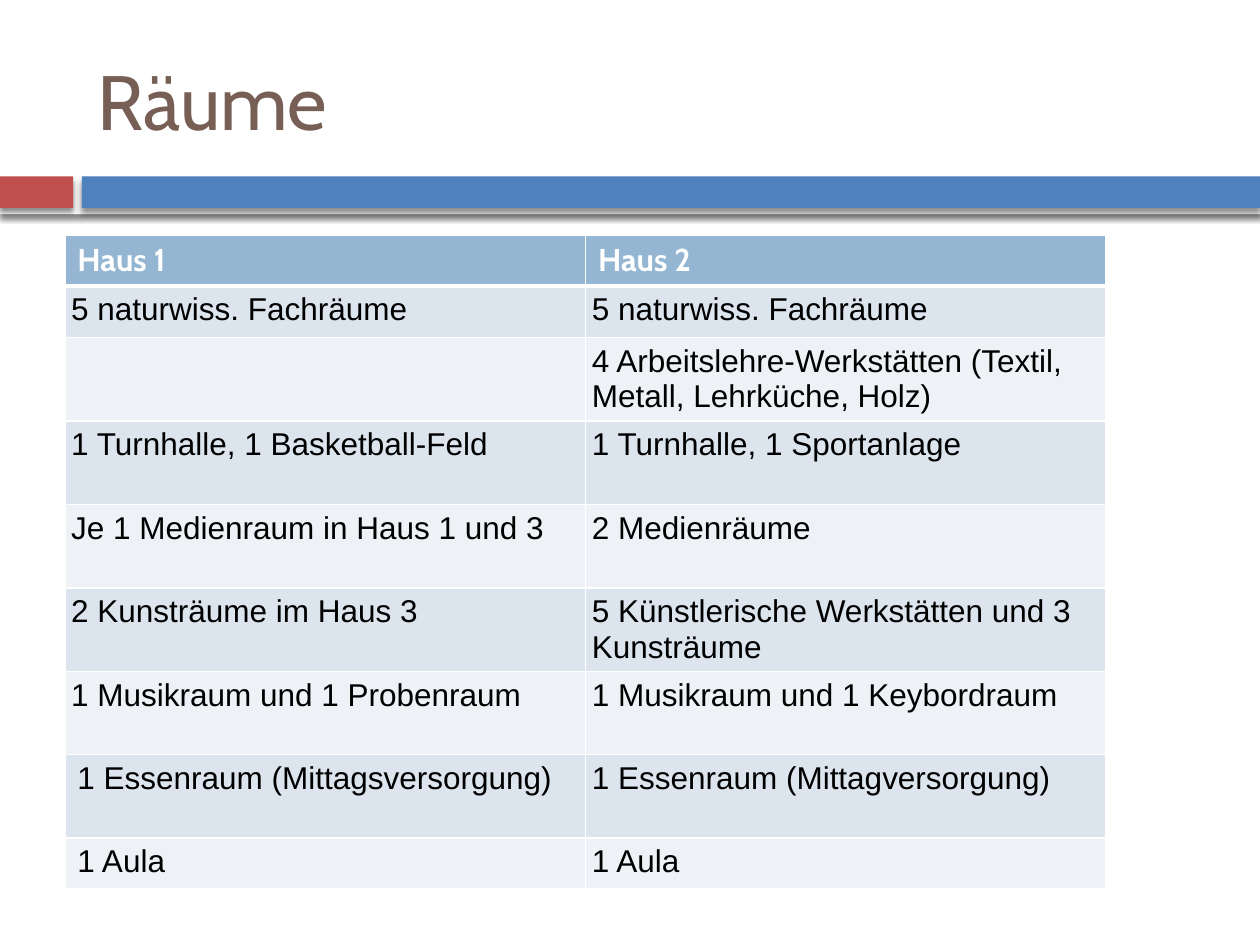
from lxml import etree
from pptx import Presentation, util as u
from pptx.dml.color import RGBColor
from pptx.enum import shapes, text
from pptx.oxml import parse_xml
from pptx.oxml.ns import nsdecls, qn

WHITE = RGBColor(0xFF, 0xFF, 0xFF)
BLACK = RGBColor(0, 0, 0)
RED = RGBColor(0xC0, 0x50, 0x4D)
BLUE = RGBColor(0x4F, 0x81, 0xBD)
BROWN = RGBColor(0x77, 0x5F, 0x55)
HEAD = RGBColor(0x94, 0xB6, 0xD2)
BANDS = (RGBColor(0xDC, 0xE5, 0xEE), RGBColor(0xEE, 0xF2, 0xF6))

ROOMS = [
    ("5 naturwiss. Fachräume", "5 naturwiss. Fachräume"),
    ("", "4 Arbeitslehre-Werkstätten (Textil, Metall, Lehrküche, Holz)"),
    ("1 Turnhalle, 1 Basketball-Feld", "1 Turnhalle, 1 Sportanlage"),
    ("Je 1 Medienraum in Haus 1 und 3", "2 Medienräume"),
    ("2 Kunsträume im Haus 3", "5 Künstlerische Werkstätten und 3 Kunsträume"),
    ("1 Musikraum und 1 Probenraum", "1 Musikraum und 1 Keybordraum"),
    ("1 Essenraum (Mittagsversorgung)", "1 Essenraum (Mittagversorgung)"),
    ("1 Aula", "1 Aula"),
]


def write(frame, words, size=18, font="Arial", color=BLACK, bold=False):
    para = frame.paragraphs[0]
    para.alignment = text.PP_ALIGN.LEFT
    para.font.size = u.Pt(size)
    if words:
        run = para.add_run()
        run.text = words
        run.font.size = u.Pt(size)
        run.font.name = font
        run.font.color.rgb = color
        run.font.bold = bold


class Deck:
    cell = u.Inches(0.1)

    def __init__(self):
        self.prs = Presentation()
        self.prs.slide_width = 100 * self.cell
        self.prs.slide_height = 75 * self.cell
        self.slide = self.prs.slides.add_slide(self.prs.slide_layouts[5])

    def grid(self, *spans):
        return [round(span * self.cell) for span in spans]

    def title(self, words, *box):
        head = self.slide.shapes.title
        head.left, head.top, head.width, head.height = self.grid(*box)
        head.text_frame.vertical_anchor = text.MSO_ANCHOR.MIDDLE
        write(head.text_frame, words, size=44, font="Cabin", color=BROWN)

    def bar(self, color, *box):
        bar = self.slide.shapes.add_shape(
            shapes.MSO_SHAPE.RECTANGLE, *self.grid(*box))
        bar.fill.solid()
        bar.fill.fore_color.rgb = color
        bar.line.fill.background()
        bar.shadow.inherit = False
        glow = bar._element.spPr.find(qn("a:effectLst"))
        glow.append(parse_xml(
            f'<a:outerShdw {nsdecls("a")} blurRad="{u.Pt(3)}" '
            f'dist="{u.Pt(2.4)}" dir="5400000" algn="ctr" rotWithShape="0">'
            '<a:srgbClr val="000000"><a:alpha val="45000"/></a:srgbClr>'
            '</a:outerShdw>'))

    def edges(self, cell, **wide):
        props = cell._tc.get_or_add_tcPr()
        for spot, side in enumerate("LRTB"):
            line = etree.Element(
                qn(f"a:ln{side}"), w=str(u.Pt(wide.get(side, 0.96))))
            fill = etree.SubElement(line, qn("a:solidFill"))
            etree.SubElement(fill, qn("a:srgbClr"), val=str(WHITE))
            props.insert(spot, line)

    def table(self, heads, rows, highs, *box):
        table = self.slide.shapes.add_table(
            len(rows) + 1, len(heads), *self.grid(*box)).table
        for row, high in zip(table.rows, highs):
            row.height = self.grid(high)[0]
        for r, words in enumerate([heads, *rows]):
            for c, word in enumerate(words):
                cell = table.cell(r, c)
                cell.fill.solid()
                cell.fill.fore_color.rgb = BANDS[(r - 1) % 2] if r else HEAD
                inset = r > 0 and (c > 0 or r < len(rows) - 1)
                cell.margin_left = cell.margin_right = u.Inches(
                    0.05 if inset else 0.1)
                cell.margin_top = cell.margin_bottom = u.Inches(0.05)
                if r == 0:
                    write(cell.text_frame, word, font="Cabin",
                          color=WHITE, bold=True)
                    self.edges(cell, B=3)
                else:
                    write(cell.text_frame, word)
                    self.edges(cell, T=3 if r == 1 else 0.96)


def main():
    deck = Deck()
    deck.bar(WHITE, 0, 13.5, 100, 3.5)
    deck.bar(RED, 0, 14, 5.8, 2.5)
    deck.bar(BLUE, 6.5, 14, 93.5, 2.5)
    deck.title("Räume", 6.7, 2.5, 89.2, 10.8)
    highs = [3.85, 4.1] + [6.62] * 6 + [4.0]
    deck.table(("Haus 1", "Haus 2"), ROOMS, highs, 5.15, 18.65, 82.65, sum(highs))
    deck.prs.save("out.pptx")


if __name__ == "__main__":
    main()
